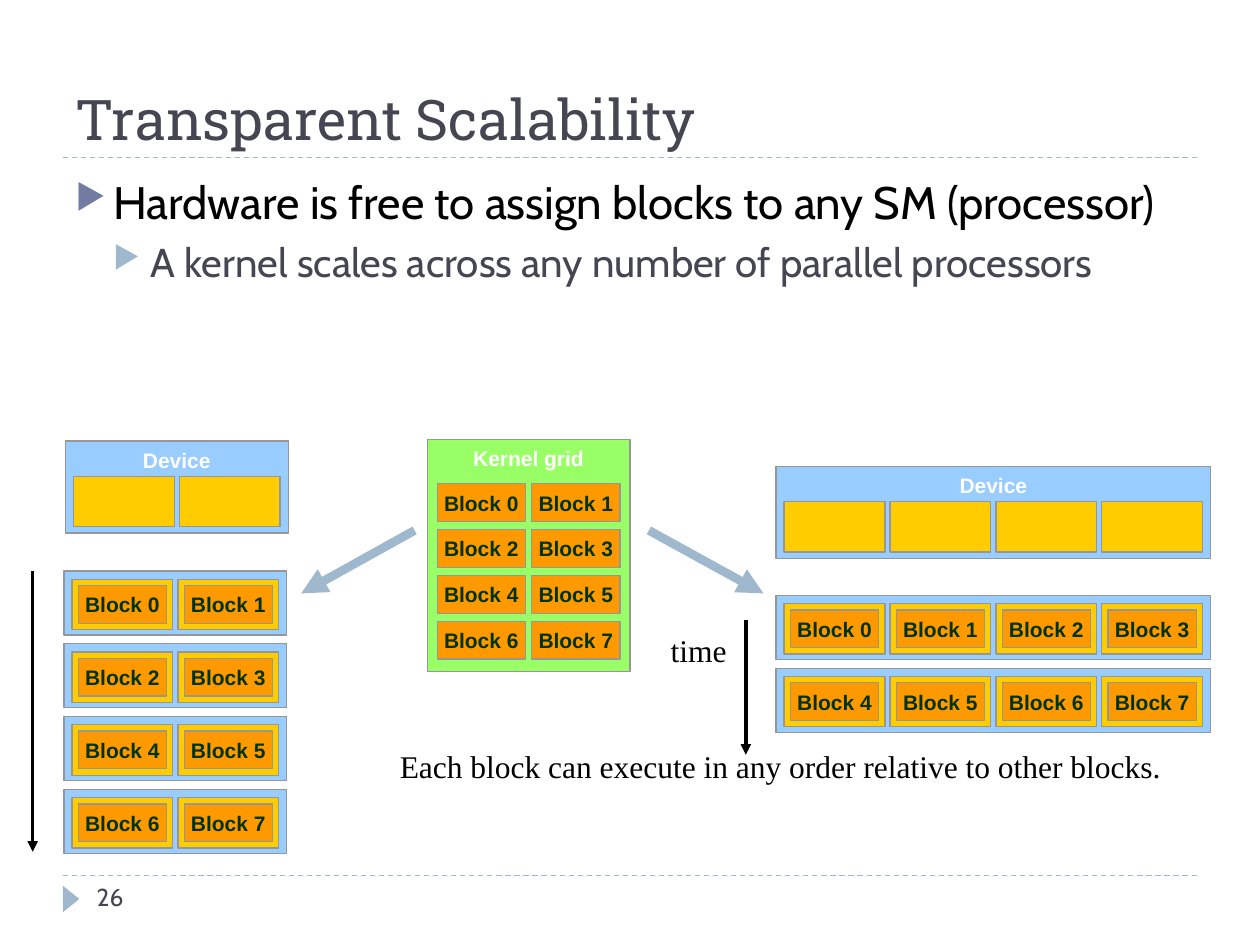
"""Build the Transparent Scalability slide: one kernel grid run on two devices."""
from lxml import etree
from pptx import Presentation
from pptx import util as u
from pptx.dml.color import RGBColor
from pptx.enum import dml, shapes, text
from pptx.oxml import ns

Pt = u.Pt
SLATE = RGBColor(0x46, 0x46, 0x53)
INDIGO = RGBColor(0x72, 0x7C, 0xA3)
STEEL = RGBColor(0x9F, 0xB8, 0xCD)
BLACK = RGBColor(0, 0, 0)
WHITE = RGBColor(0xFF, 0xFF, 0xFF)
GRAY = RGBColor(0x96, 0x96, 0x96)
SKY = RGBColor(0x99, 0xCC, 0xFF)
GOLD = RGBColor(0xFF, 0xCC, 0)
ORANGE = RGBColor(0xFF, 0x99, 0)
LIME = RGBColor(0x99, 0xFF, 0x66)
FOREST = RGBColor(0, 0x33, 0)

TITLE = "Transparent Scalability"
BULLETS = [
    ("Hardware is free to assign blocks to any SM (processor)", 26, BLACK, INDIGO, 6),
    ("A kernel scales across any number of parallel processors", 23, SLATE, STEEL, 5),
]
BLOCKS = [f"Block {number}" for number in range(8)]
DEVICES = [
    {"columns": 2, "device": (37.4, 252), "batches": (36.6, 326.2)},
    {"columns": 4, "device": (443.5, 266.4), "batches": (443.5, 340.2)},
]
RULES = [(36, 90, 684, 90), (36, 500.4, 684, 500.4)]
TIME_ARROWS = [(18.7, 326.2, 18.7, 486.7), (426.2, 354.2, 426.2, 431.3)]
SPLIT_ARROWS = [(236.9, 303.1, 172.1, 339.1), (370.8, 303.1, 436.3, 339.1)]

CELL_W, CELL_H, CELL_GAP, PAD_X = 57.6, 28.8, 2.9, 4.6
BLOCK_W, BLOCK_H, BLOCK_INSET = 50.4, 21.6, 3.6
DEVICE_H, DEVICE_PAD = 52.6, 20.2
BATCH_H, BATCH_PAD, BATCH_PITCH = 36.7, 4.8, 41.6
GRID_X, GRID_Y, GRID_W, GRID_H = 244.1, 251.3, 115.9, 132.5
GRID_PAD_X, GRID_PAD_Y, GRID_PITCH_X, GRID_PITCH_Y = 5.8, 25.2, 54, 26.2


def add_xml(parent, tag, **attributes):
    return etree.SubElement(parent, ns.qn(tag), attributes)


def write(para, words, size=12, font="Arial", color=BLACK, bold=False, align=None):
    span = para.add_run()
    span.text = words
    span.font.size, span.font.name, span.font.bold = Pt(size), font, bold
    span.font.color.rgb = color
    para.alignment = align


def add_text(page, place, words, anchor=text.MSO_ANCHOR.TOP, wrap=True, grow=False, **style):
    box = page.shapes.add_textbox(*map(Pt, place))
    frame = box.text_frame
    frame.word_wrap, frame.vertical_anchor = wrap, anchor
    if grow:
        frame.auto_size = text.MSO_AUTO_SIZE.SHAPE_TO_FIT_TEXT
    write(frame.paragraphs[0], words, **style)


def add_rect(group, left, top, width, height, fill, label=None, color=WHITE,
             anchor=text.MSO_ANCHOR.TOP, wrap=True):
    rect = group.shapes.add_shape(
        shapes.MSO_SHAPE.RECTANGLE, *map(Pt, (left, top, width, height)))
    rect.shadow.inherit = False
    rect.fill.solid()
    rect.fill.fore_color.rgb = fill
    rect.line.color.rgb, rect.line.width = GRAY, Pt(0.75)
    if label:
        frame = rect.text_frame
        frame.word_wrap, frame.vertical_anchor = wrap, anchor
        write(frame.paragraphs[0], label, color=color, bold=True, align=text.PP_ALIGN.CENTER)


def add_block(group, left, top, label):
    add_rect(group, left, top, BLOCK_W, BLOCK_H, ORANGE, label, FOREST,
             text.MSO_ANCHOR.MIDDLE, wrap=False)


def add_line(page, ends, color, width, dash=None, arrow=False):
    line = page.shapes.add_connector(shapes.MSO_CONNECTOR.STRAIGHT, *map(Pt, ends))
    line.line.color.rgb, line.line.width = color, Pt(width)
    if dash:
        line.line.dash_style = dash
    if arrow:
        add_xml(line.line._get_or_add_ln(), "a:tailEnd", type="triangle")
    add_xml(line._element.spPr, "a:effectLst")


def add_bullets(page):
    frame = page.shapes.add_textbox(Pt(36), Pt(95.8), Pt(648), Pt(388.8)).text_frame
    frame.word_wrap = True
    for level, (words, size, color, mark, space) in enumerate(BULLETS):
        para = frame.paragraphs[0] if level == 0 else frame.add_paragraph()
        para.level, para.space_before = level, Pt(space)
        write(para, words, size=size, font="Cabin", color=color)
        props = para._p.get_or_add_pPr()
        props.set("marL", str(Pt(21.6 * (level + 1))))
        props.set("indent", str(-Pt(21.6)))
        add_xml(add_xml(props, "a:buClr"), "a:srgbClr", val=str(mark))
        add_xml(props, "a:buSzPct", val="76000")
        add_xml(props, "a:buChar", char="▶")


def add_device(page, columns, device, batches):
    group = page.shapes.add_group_shape()
    width = 2 * PAD_X + columns * CELL_W + (columns - 1) * CELL_GAP
    offsets = [PAD_X + column * (CELL_W + CELL_GAP) for column in range(columns)]
    left, top = device
    add_rect(group, left, top, width, DEVICE_H, SKY, "Device")
    for offset in offsets:
        add_rect(group, left + offset, top + DEVICE_PAD, CELL_W, CELL_H, GOLD)
    left, top = batches
    for start in range(0, len(BLOCKS), columns):
        add_rect(group, left, top, width, BATCH_H, SKY)
        for offset, label in zip(offsets, BLOCKS[start:start + columns]):
            x, y = left + offset, top + BATCH_PAD
            add_rect(group, x, y, CELL_W, CELL_H, GOLD)
            add_block(group, x + BLOCK_INSET, y + BLOCK_INSET, label)
        top += BATCH_PITCH


def add_kernel_grid(page):
    group = page.shapes.add_group_shape()
    add_rect(group, GRID_X, GRID_Y, GRID_W, GRID_H, LIME, "Kernel grid")
    for index, label in enumerate(BLOCKS):
        row, column = divmod(index, 2)
        add_block(group, GRID_X + GRID_PAD_X + column * GRID_PITCH_X,
                  GRID_Y + GRID_PAD_Y + row * GRID_PITCH_Y, label)


def add_page_marker(page):
    marker = page.shapes.add_shape(
        shapes.MSO_SHAPE.ISOSCELES_TRIANGLE, Pt(33.1), Pt(509), Pt(15.1), Pt(9.4))
    marker.rotation = 90
    marker.shadow.inherit = False
    marker.fill.solid()
    marker.fill.fore_color.rgb = STEEL
    marker.line.fill.background()


def main():
    deck = Presentation()
    deck.slide_width, deck.slide_height = Pt(720), Pt(540)
    page = deck.slides.add_slide(deck.slide_layouts[6])
    for ends in RULES:
        add_line(page, ends, STEEL, 0.75, dash=dml.MSO_LINE.DASH)
    add_page_marker(page)
    add_text(page, (36, 12.2, 648, 77.8), TITLE, anchor=text.MSO_ANCHOR.BOTTOM,
             size=32, font="Roboto Slab", color=SLATE)
    add_text(page, (48.2, 500.4, 156.2, 28.8), "26", size=14, font="Cabin", color=SLATE)
    add_bullets(page)
    add_kernel_grid(page)
    for device in DEVICES:
        add_device(page, **device)
    for ends in TIME_ARROWS:
        add_line(page, ends, BLACK, 2, arrow=True)
    for ends in SPLIT_ARROWS:
        add_line(page, ends, STEEL, 5, arrow=True)
    note = {"size": 18, "font": "Times New Roman", "align": text.PP_ALIGN.CENTER, "grow": True}
    add_text(page, (196.6, 423.4, 499, 64.8),
             "Each block can execute in any order relative to other blocks.", **note)
    add_text(page, (370.8, 357.1, 56.9, 36), "time", wrap=False, **note)
    deck.save("out.pptx")


if __name__ == "__main__":
    main()
